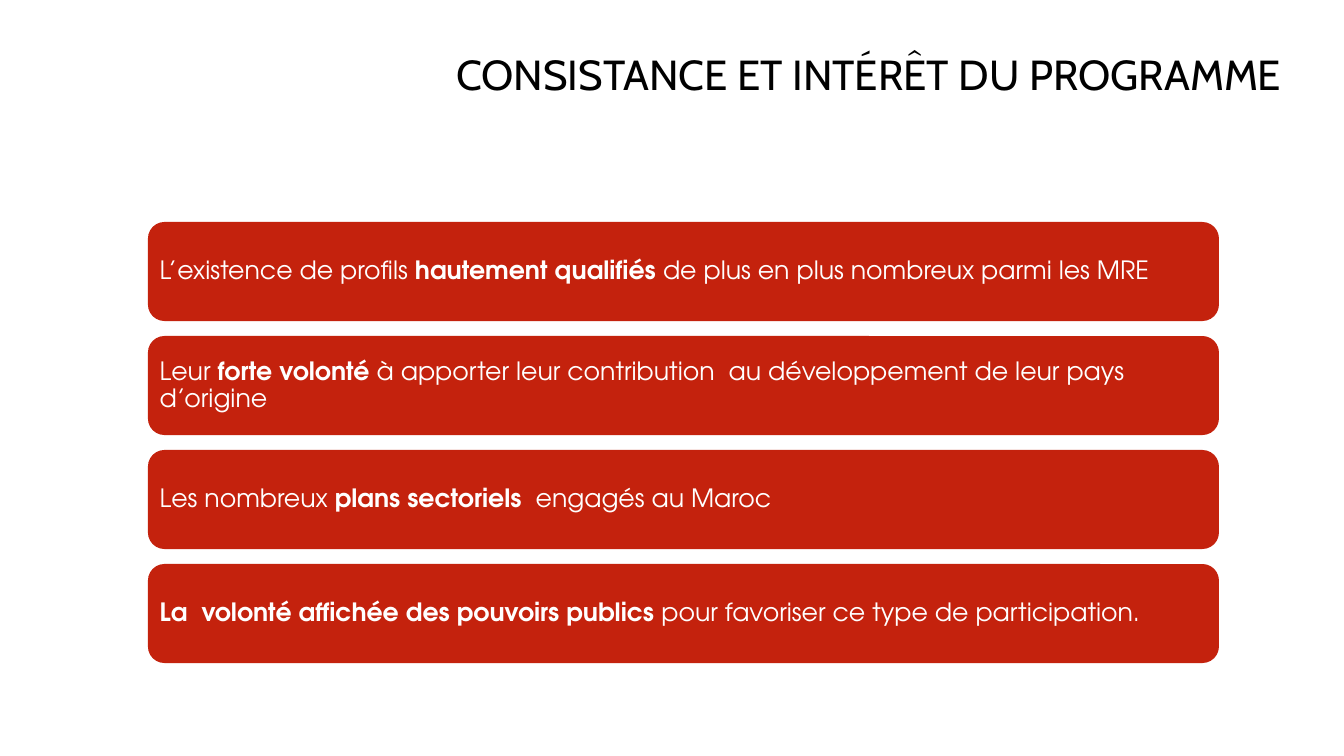
import pptx
import pptx.util
import pptx.dml.color
import pptx.enum.shapes
import pptx.enum.text

SCALE = 9144000 / 1008  # EMU per px
COLORS = {"black": "000000", "white": "FFFFFF", "red": "C4220D"}
TITLE = "CONSISTANCE ET INTÉRÊT DU PROGRAMME"
# Each card is a list of (text, bold) runs.
CARDS = [
    [("L’existence de profils ", False), ("hautement qualifiés ", True),
     ("de plus en plus nombreux parmi les MRE", False)],
    [("Leur ", False), ("forte volonté", True),
     (" à apporter leur contribution  au développement de leur pays d’origine",
      False)],
    [("Les nombreux ", False), ("plans sectoriels  ", True),
     ("engagés au Maroc", False)],
    [("La  volonté affichée des pouvoirs publics ", True),
     ("pour favoriser ce type de participation.", False)],
]
LEFT, TOP, WIDTH, HEIGHT, PITCH = 148, 222, 1071, 99, 114
INSET = 7


def px(count):
    return pptx.util.Emu(round(count * SCALE))


def color(name):
    return pptx.dml.color.RGBColor.from_string(COLORS[name])


def style(run, face, size, tint, bold=False):
    font = run.font
    font.name = face
    font.size = pptx.util.Pt(size)
    font.bold = bold
    font.color.rgb = color(tint)


def add_title(slide, text):
    box = slide.shapes.add_textbox(px(407), px(24), px(924), px(109))
    frame = box.text_frame
    frame.word_wrap = True
    frame.vertical_anchor = pptx.enum.text.MSO_ANCHOR.MIDDLE
    frame.text = text
    para = frame.paragraphs[0]
    para.alignment = pptx.enum.text.PP_ALIGN.CENTER
    para.line_spacing = 0.8
    style(para.runs[0], "Cabin", 30, "black")


def add_card(slide, top, parts):
    card = slide.shapes.add_shape(
        pptx.enum.shapes.MSO_SHAPE.ROUNDED_RECTANGLE,
        px(LEFT), px(top), px(WIDTH), px(HEIGHT))
    card.shadow.inherit = False
    card.fill.solid()
    card.fill.fore_color.rgb = color("red")
    card.line.fill.background()
    frame = card.text_frame
    frame.word_wrap = True
    frame.vertical_anchor = pptx.enum.text.MSO_ANCHOR.MIDDLE
    frame.margin_left = frame.margin_right = px(INSET)
    frame.margin_top = frame.margin_bottom = px(INSET)
    para = frame.paragraphs[0]
    para.alignment = pptx.enum.text.PP_ALIGN.LEFT
    para.line_spacing = 0.9
    for text, bold in parts:
        run = para.add_run()
        run.text = text
        style(run, "TeX Gyre Adventor", 18, "white", bold)


def main():
    deck = pptx.Presentation()
    deck.slide_width, deck.slide_height = px(1344), px(756)
    slide = deck.slides.add_slide(deck.slide_layouts[6])
    add_title(slide, TITLE)
    for row, parts in enumerate(CARDS):
        add_card(slide, TOP + row * PITCH, parts)
    deck.save("out.pptx")


if __name__ == "__main__":
    main()
